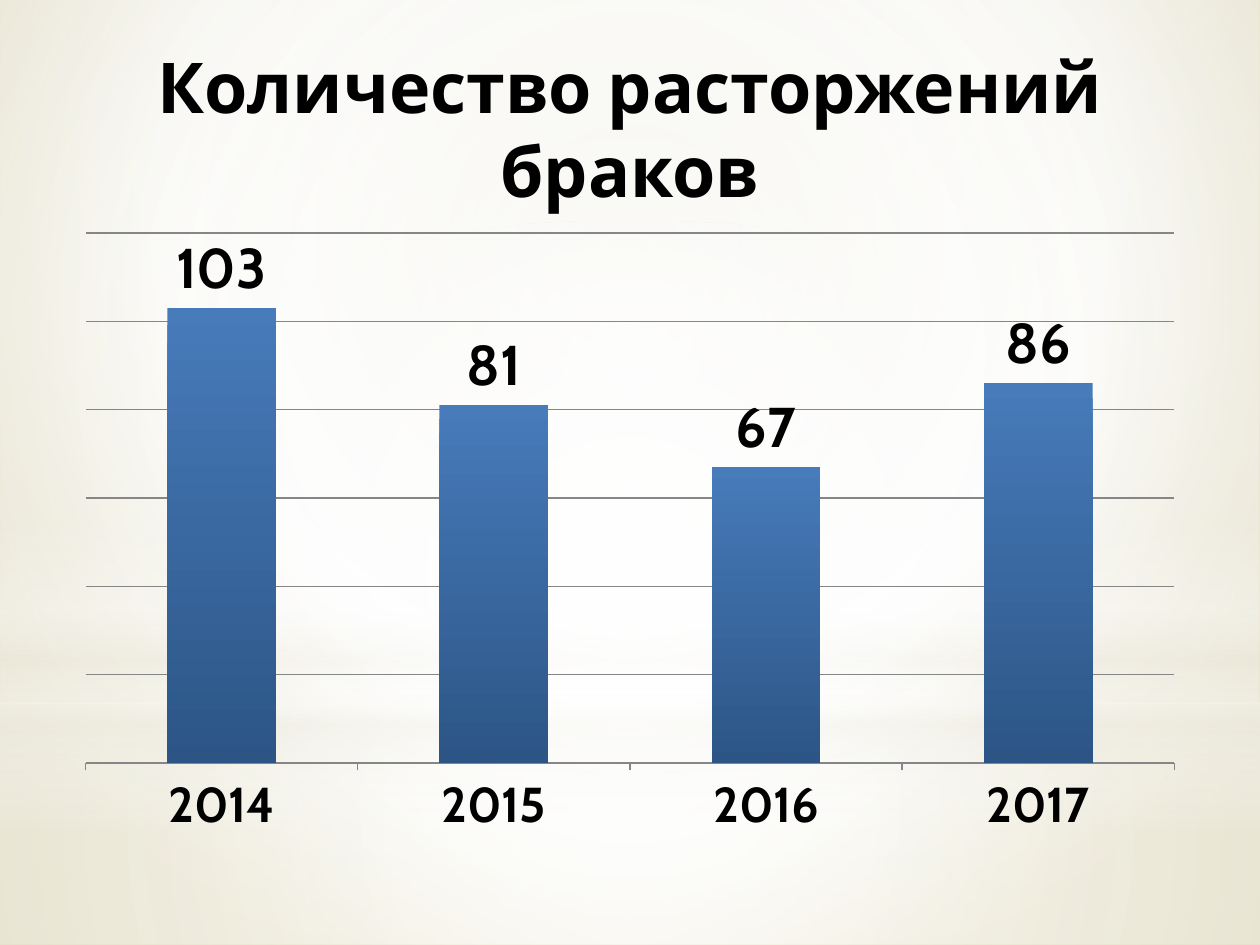
from lxml import etree
from pptx import Presentation
from pptx.chart.data import CategoryChartData
from pptx.dml.color import RGBColor
from pptx.enum.chart import XL_CHART_TYPE, XL_LABEL_POSITION, XL_TICK_LABEL_POSITION, XL_TICK_MARK
from pptx.enum.shapes import MSO_SHAPE
from pptx.enum.text import MSO_ANCHOR, PP_ALIGN
from pptx.oxml import parse_xml
from pptx.oxml.ns import nsdecls, qn
from pptx.util import Inches, Pt

RECTANGLE, OVAL = MSO_SHAPE.RECTANGLE, MSO_SHAPE.OVAL
COLUMNS = XL_CHART_TYPE.COLUMN_CLUSTERED
ABOVE_BAR = XL_LABEL_POSITION.OUTSIDE_END
NO_TICK_LABELS = XL_TICK_LABEL_POSITION.NONE
NO_TICK, OUTSIDE_TICK = XL_TICK_MARK.NONE, XL_TICK_MARK.OUTSIDE
TOP, CENTER = MSO_ANCHOR.TOP, PP_ALIGN.CENTER

FONT = "Cabin"
INK, GRID = "000000", "868686"
CENTRED = (50, 50, 50, 50)
BACKGROUND = [(0, "E7E4D4", 100), (60, "FFFFFF", 100), (100, "D5CC9F", 100)]
FLOOR = [(0, "FFFFFF", 91), (37, "FFFFFF", 76), (100, "EEECE1", 79)]
WALL = [(0, "FFFFFF", 89), (48, "FFFFFF", 62), (100, "EEECE1", 79)]
HORIZON = [(0, "FFFFFF", 0), (29, "FFFFFF", 30), (45, "EEECE1", 40),
           (55, "FFFFFF", 26), (65, "EEECE1", 60), (100, "FFFFFF", 0)]
GLOW = [(0, "FFFFFF", 100), (56, "FFFFFF", 0)]
BAR = [(0, "477BBA", 100), (100, "2C5586", 100)]
DIVORCES = {"2014": 103, "2015": 81, "2016": 67, "2017": 86}


def rgb(color):
    return RGBColor.from_string(color)


def set_attributes(target, formats):
    for name, value in formats.items():
        setattr(target, name, value)


def style_font(font, size, bold=True):
    set_attributes(font, {"name": FONT, "size": Pt(size), "bold": bold})
    font.color.rgb = rgb(INK)


def style_line(line, color, width):
    line.color.rgb = rgb(color)
    line.width = Pt(width)


def apply_gradient(fill, properties, stops, focus=None):
    fill.gradient()
    stop_xml = "".join(
        f'<a:gs pos="{position * 1000}"><a:srgbClr val="{color}">'
        f'<a:alpha val="{opacity * 1000}"/></a:srgbClr></a:gs>'
        for position, color, opacity in stops)
    direction = '<a:lin ang="5400000" scaled="0"/>'
    if focus:
        sides = " ".join(f'{side}="{share * 1000}"' for side, share in zip("ltrb", focus))
        direction = f'<a:path path="circle"><a:fillToRect {sides}/></a:path>'
    gradient = parse_xml(f'<a:gradFill {nsdecls("a")} rotWithShape="1">'
                         f'<a:gsLst>{stop_xml}</a:gsLst>{direction}</a:gradFill>')
    properties.replace(properties.find(qn("a:gradFill")), gradient)


def paint_background(slide):
    fill = slide.background.fill
    properties = slide.element.find(".//" + qn("p:bgPr"))
    if properties is None:
        fill.gradient()
        properties = slide.element.find(".//" + qn("p:bgPr"))
    apply_gradient(fill, properties, BACKGROUND, (20, 10, 20, 60))


def add_haze(slide, kind, top, height, stops, focus):
    haze = slide.shapes.add_shape(kind, 0, Inches(top), Inches(10), Inches(height))
    haze.shadow.inherit = False
    haze.line.fill.background()
    apply_gradient(haze.fill, haze.element.spPr, stops, focus)


def add_title(slide, text):
    frame = slide.shapes.add_textbox(Inches(0.5), Inches(0.3), Inches(9), Inches(1.25)).text_frame
    set_attributes(frame, {"word_wrap": True, "vertical_anchor": TOP})
    heading = frame.paragraphs[0]
    set_attributes(heading, {"text": text, "alignment": CENTER})
    style_font(heading.font, 40)


def place_plot(chart, **bounds):
    plot_area = chart.element.find(".//" + qn("c:plotArea"))
    for old_layout in plot_area.findall(qn("c:layout")):
        plot_area.remove(old_layout)
    layout = etree.Element(qn("c:layout"))
    manual = etree.SubElement(layout, qn("c:manualLayout"))
    settings = {"layoutTarget": "inner", "xMode": "edge", "yMode": "edge", **bounds}
    for name, value in settings.items():
        etree.SubElement(manual, qn(f"c:{name}")).set("val", str(value))
    plot_area.insert(0, layout)


def add_divorce_chart(slide):
    data = CategoryChartData()
    data.categories = list(DIVORCES)
    data.add_series("Series 1", list(DIVORCES.values()))
    chart = slide.shapes.add_chart(
        COLUMNS, Inches(0.5), Inches(1.75), Inches(9), Inches(4.95), data).chart
    set_attributes(chart, {"has_legend": False, "has_title": False})
    style_font(chart.font, 18, bold=False)
    place_plot(chart, x=0.02, y=0.02, w=0.96, h=0.85)

    years = chart.category_axis
    set_attributes(years, {"major_tick_mark": OUTSIDE_TICK, "has_major_gridlines": False})
    style_font(years.tick_labels.font, 28)
    style_line(years.format.line, GRID, 0.75)

    counts = chart.value_axis
    set_attributes(counts, {
        "minimum_scale": 0, "maximum_scale": 120, "major_unit": 20,
        "has_major_gridlines": True, "major_tick_mark": NO_TICK,
        "tick_label_position": NO_TICK_LABELS})
    counts.format.line.fill.background()
    style_line(counts.major_gridlines.format.line, GRID, 0.75)

    plot = chart.plots[0]
    set_attributes(plot, {"gap_width": 150, "vary_by_categories": False})
    bars = plot.series[0]
    bar_fill = bars.format.fill
    apply_gradient(bar_fill, bars.format.element.spPr if hasattr(bars.format, "element")
                   else chart.element.find(".//" + qn("c:ser")).find(qn("c:spPr")), BAR)
    labels = bars.data_labels
    set_attributes(labels, {"show_value": True, "position": ABOVE_BAR})
    style_font(labels.font, 32)


def main():
    presentation = Presentation()
    set_attributes(presentation, {"slide_width": Inches(10), "slide_height": Inches(7.5)})
    slide = presentation.slides.add_slide(presentation.slide_layouts[6])
    paint_background(slide)
    add_haze(slide, RECTANGLE, 5.58, 1.92, FLOOR, CENTRED)
    add_haze(slide, RECTANGLE, 0, 5.58, WALL, CENTRED)
    add_haze(slide, RECTANGLE, 4.12, 2.5, HORIZON, None)
    add_haze(slide, OVAL, 1.75, 5.58, GLOW, CENTRED)
    add_title(slide, "Количество расторжений браков")
    add_divorce_chart(slide)
    presentation.save("out.pptx")


if __name__ == "__main__":
    main()
